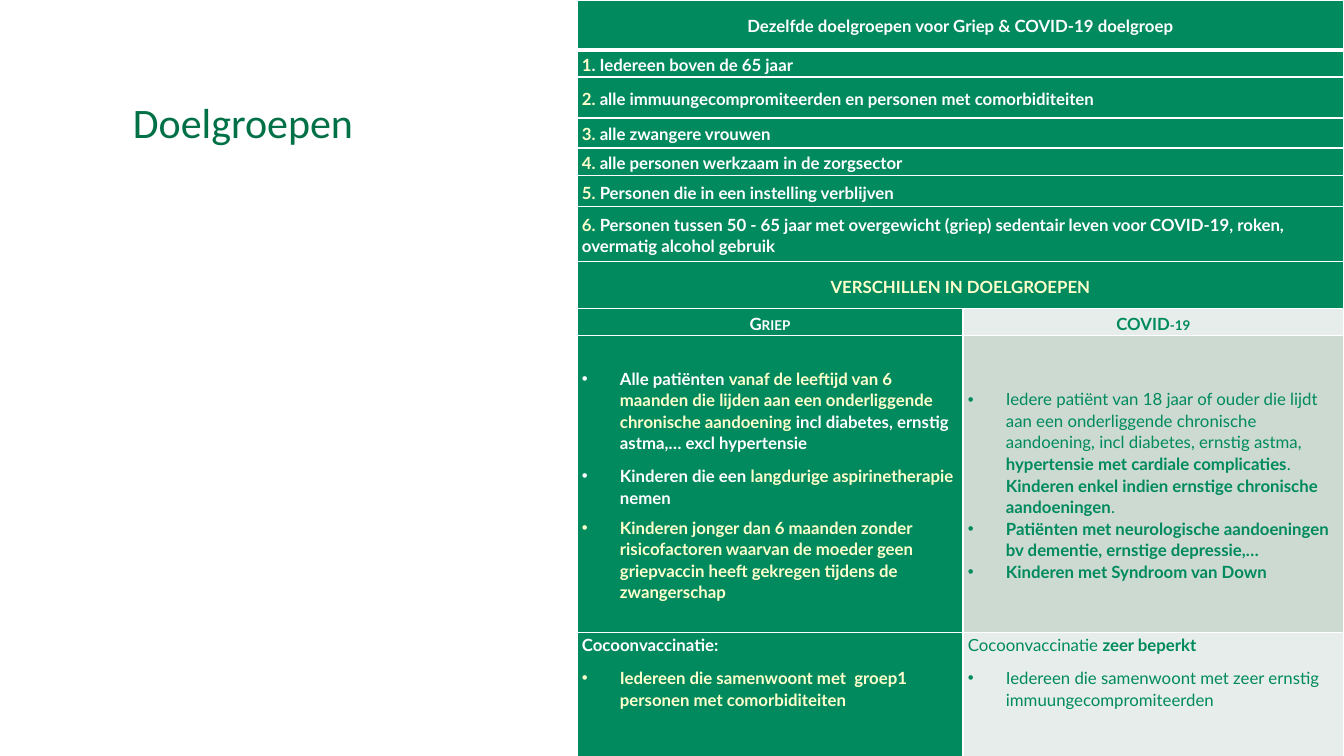
from lxml.etree import SubElement
from pptx import Presentation
from pptx.dml.color import RGBColor
from pptx.enum.text import MSO_ANCHOR, PP_ALIGN
from pptx.oxml import parse_xml
from pptx.oxml.ns import nsdecls, qn
from pptx.util import Emu, Pt

GREEN = RGBColor(0x00, 0x8A, 0x5E)
TITLE_GREEN = RGBColor(0x00, 0x71, 0x46)
PALE_GREEN = RGBColor(0xE7, 0xED, 0xEA)
GREY_GREEN = RGBColor(0xCC, 0xDA, 0xD2)
WHITE = RGBColor(0xFF, 0xFF, 0xFF)
CREAM = RGBColor(0xFF, 0xFF, 0xCC)

SHARED_GROUPS = [
    ("1", ". Iedereen boven de 65 jaar"),
    ("2. ", "alle immuungecompromiteerden en personen met comorbiditeiten"),
    ("3. ", "alle zwangere vrouwen"),
    ("4. ", "alle personen werkzaam in de zorgsector"),
    ("5. ", "Personen die in een instelling verblijven"),
    ("6. ", "Personen tussen 50 - 65 jaar met overgewicht (griep) sedentair leven "
            "voor COVID-19, roken, overmatig alcohol gebruik"),
]
ROW_HEIGHTS = [50, 27, 41, 30, 28, 31, 55, 47, 27, 297, 127]
COLUMN_WIDTHS = [386, 381]


def px(length):
    """Turn pixels into EMU."""
    return Emu(round(length * 914400 / 100.8))


def write(paragraph, text, font="Lato", size=12, color=WHITE, bold=True, small_caps=False):
    """Add a formatted run of text, breaking the line at each newline."""
    for index, line in enumerate(text.split("\n")):
        if index:
            paragraph.add_line_break()
        run = paragraph.add_run()
        run.text = line
        run.font.name = font
        run.font.size = Pt(size)
        run.font.bold = bold
        run.font.color.rgb = color
        if small_caps:
            run.font._element.set("cap", "small")


def item(*runs, bullet=True, after=8, align=PP_ALIGN.LEFT):
    """Describe one paragraph of a table cell."""
    return {"runs": runs, "bullet": bullet, "after": after, "align": align}


def plain(text, **style):
    """Pair a run of text with its format."""
    return text, style


class TargetGroupSlide:
    """Hold the slide and build its elements in one style."""

    def __init__(self, presentation):
        """Add a blank slide."""
        self.slide = presentation.slides.add_slide(presentation.slide_layouts[6])

    def title(self, text, left, top, width, height):
        """Add the slide title."""
        shape = self.slide.shapes.add_textbox(px(left), px(top), px(width), px(height))
        frame = shape.text_frame
        frame.word_wrap = True
        frame.vertical_anchor = MSO_ANCHOR.MIDDLE
        paragraph = frame.paragraphs[0]
        paragraph.line_spacing = 0.9
        write(paragraph, text, font="Calibri", size=30, color=TITLE_GREEN, bold=False)

    def table(self, left, top, widths, heights):
        """Add an unbanded table with the given columns and rows."""
        shape = self.slide.shapes.add_table(
            len(heights), len(widths), px(left), px(top), px(sum(widths)), px(sum(heights)))
        table = shape.table
        table.first_row = table.horz_banding = False
        for column, width in zip(table.columns, widths):
            column.width = px(width)
        for row, height in zip(table.rows, heights):
            row.height = px(height)
        return table

    def cell(self, cell, items, fill=GREEN, anchor=MSO_ANCHOR.MIDDLE, top=1, bottom=1):
        """Fill a table cell with paragraphs and give it white borders."""
        cell.margin_left = cell.margin_right = px(5)
        cell.margin_top, cell.margin_bottom = px(1), 0
        cell.vertical_anchor = anchor
        cell.fill.solid()
        cell.fill.fore_color.rgb = fill
        sides = {"L": 1, "R": 1, "T": top, "B": bottom}
        for index, (side, width) in enumerate(sides.items()):
            border = parse_xml(
                f'<a:ln{side} {nsdecls("a")} w="{Pt(width)}"><a:solidFill>'
                f'<a:srgbClr val="{WHITE}"/></a:solidFill></a:ln{side}>')
            cell._tc.tcPr.insert(index, border)
        frame = cell.text_frame
        for index, entry in enumerate(items):
            self.paragraph(frame.add_paragraph() if index else frame.paragraphs[0], entry)

    def paragraph(self, paragraph, entry):
        """Lay out one cell paragraph and write its runs."""
        if entry["bullet"]:
            properties = paragraph._p.get_or_add_pPr()
            properties.set("marL", str(px(38)))
            properties.set("indent", str(-px(38)))
            SubElement(properties, qn("a:buFont"), typeface="Arial")
            SubElement(properties, qn("a:buChar"), char="•")
        paragraph.alignment = entry["align"]
        paragraph.line_spacing = 1.07
        paragraph.space_after = Pt(entry["after"])
        for text, style in entry["runs"]:
            write(paragraph, text, **style)


def heading(text, **style):
    """Describe a centred heading cell."""
    return [item(plain(text, **style), bullet=False, align=PP_ALIGN.CENTER)]


def main():
    """Build and save the presentation."""
    presentation = Presentation()
    presentation.slide_width, presentation.slide_height = px(1344), px(756)
    board = TargetGroupSlide(presentation)
    board.title("Doelgroepen", 123, 60, 1121, 130)
    table = board.table(577, 0, COLUMN_WIDTHS, ROW_HEIGHTS)

    full_rows = [heading("Dezelfde doelgroepen voor Griep & COVID-19 doelgroep")]
    full_rows += [[item(plain(number, color=CREAM), plain(group), bullet=False)]
                  for number, group in SHARED_GROUPS]
    full_rows.append(heading("VERSCHILLEN IN DOELGROEPEN", color=CREAM))
    for row, items in enumerate(full_rows):
        table.cell(row, 0).merge(table.cell(row, 1))
        board.cell(table.cell(row, 0), items,
                   top=3 if row == 1 else 1, bottom=3 if row == 0 else 1)

    light = {"color": GREEN, "bold": False}
    strong = {"color": GREEN}
    flu_groups = [
        item(plain("Alle patiënten "),
             plain("vanaf de leeftijd van 6 maanden die lijden aan een onderliggende "
                   "chronische aandoening ", color=CREAM),
             plain("incl diabetes, ernstig astma,… excl hypertensie")),
        item(plain("Kinderen die een "), plain("langdurige aspirinetherapie", color=CREAM),
             plain(" nemen"), after=6),
        item(plain("Kinderen jonger dan 6 maanden zonder risicofactoren waarvan de moeder "
                   "geen griepvaccin heeft gekregen tijdens de \nzwangerschap", color=CREAM),
             after=0),
    ]
    covid_groups = [
        item(plain("Iedere patiënt van 18 jaar of ouder die lijdt aan een onderliggende "
                   "chronische aandoening, incl diabetes, ernstig astma, ", **light),
             plain("hypertensie met cardiale complicaties", **strong),
             plain(". ", **light),
             plain("Kinderen enkel indien ernstige chronische aandoeningen", **strong),
             plain(".", **light), after=0),
        item(plain("Patiënten met neurologische aandoeningen bv dementie, "
                   "ernstige depressie,…", **strong), after=0),
        item(plain("Kinderen met Syndroom van Down", **strong)),
    ]
    flu_cocoon = [
        item(plain("Cocoonvaccinatie:"), bullet=False),
        item(plain("Iedereen die samenwoont met  groep1 personen met comorbiditeiten",
                   color=CREAM)),
    ]
    covid_cocoon = [
        item(plain("Cocoonvaccinatie ", **light), plain("zeer beperkt", **strong), bullet=False),
        item(plain("Iedereen die samenwoont met zeer ernstig immuungecompromiteerden", **light)),
    ]
    split_rows = [
        (heading("Griep", small_caps=True), heading("COVID-19", small_caps=True, **strong),
         PALE_GREEN, MSO_ANCHOR.MIDDLE),
        (flu_groups, covid_groups, GREY_GREEN, MSO_ANCHOR.MIDDLE),
        (flu_cocoon, covid_cocoon, PALE_GREEN, MSO_ANCHOR.TOP),
    ]
    for row, (flu, covid, fill, anchor) in enumerate(split_rows, len(full_rows)):
        board.cell(table.cell(row, 0), flu, anchor=anchor)
        board.cell(table.cell(row, 1), covid, fill=fill, anchor=anchor)

    presentation.save("out.pptx")


if __name__ == "__main__":
    main()
